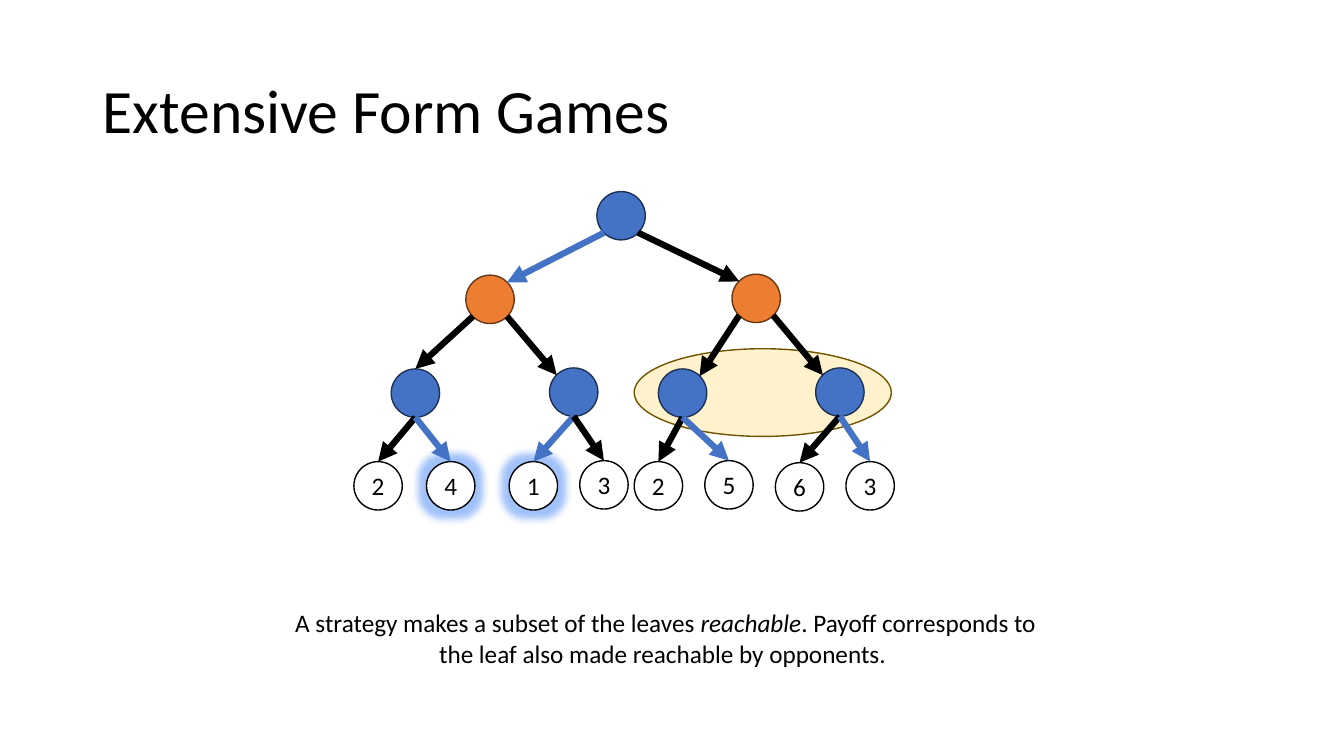
from dataclasses import dataclass
from typing import Any

from lxml import etree
from pptx import Presentation
from pptx.dml.color import RGBColor
from pptx.enum.shapes import MSO_CONNECTOR, MSO_SHAPE
from pptx.enum.text import MSO_ANCHOR, MSO_AUTO_SIZE, PP_ALIGN
from pptx.oxml.ns import qn
from pptx.util import Inches, Pt

OVAL = MSO_SHAPE.OVAL
STRAIGHT = MSO_CONNECTOR.STRAIGHT
MIDDLE = MSO_ANCHOR.MIDDLE
LEFT, CENTER = PP_ALIGN.LEFT, PP_ALIGN.CENTER
FIT_SHAPE = MSO_AUTO_SIZE.SHAPE_TO_FIT_TEXT

BLUE, BLUE_EDGE = "4472C4", "1E3256"
ORANGE, ORANGE_EDGE = "ED7D31", "683715"
CREAM, CREAM_EDGE = "FFF2CC", "705400"
WHITE, BLACK = "FFFFFF", "000000"

NODE_SIZE = 0.48
GLOW_RADIUS = Pt(11)

# Attachment points as fractions of a node's width and height.
ANCHORS = {
    "top": (0.5, 0),
    "bottom": (0.5, 1),
    "top left": (0.15, 0.15),
    "top right": (0.85, 0.15),
    "bottom left": (0.15, 0.85),
    "bottom right": (0.85, 0.85),
}


@dataclass(frozen=True)
class Node:
    left: float
    top: float
    fill: str = WHITE
    edge: str = BLACK
    payoff: str = ""
    reachable: bool = False


@dataclass(frozen=True)
class Move:
    parent: str
    child: str
    start: str = "bottom"
    end: str = "top"
    color: str = BLACK


@dataclass(frozen=True)
class TextPart:
    words: str
    size: int = 18
    italic: bool = False


NODES = {
    "root": Node(5.92, 1.9, BLUE, BLUE_EDGE),
    "L": Node(4.62, 2.73, ORANGE, ORANGE_EDGE),
    "R": Node(7.26, 2.72, ORANGE, ORANGE_EDGE),
    "LL": Node(3.88, 3.66, BLUE, BLUE_EDGE),
    "LR": Node(5.45, 3.65, BLUE, BLUE_EDGE),
    "RL": Node(6.53, 3.66, BLUE, BLUE_EDGE),
    "RR": Node(8.09, 3.65, BLUE, BLUE_EDGE),
    "LLL": Node(3.51, 4.58, payoff="2"),
    "LLR": Node(4.23, 4.58, payoff="4", reachable=True),
    "LRL": Node(5.05, 4.58, payoff="1", reachable=True),
    "LRR": Node(5.75, 4.57, payoff="3"),
    "RLL": Node(6.29, 4.58, payoff="2"),
    "RLR": Node(6.99, 4.57, payoff="5"),
    "RRL": Node(7.69, 4.59, payoff="6"),
    "RRR": Node(8.39, 4.58, payoff="3"),
}

MOVES = [
    Move("root", "L", "bottom left", "top right", BLUE),
    Move("root", "R", "bottom right", "top left"),
    Move("L", "LL", "bottom left", "top"),
    Move("L", "LR", "bottom right", "top left"),
    Move("R", "RL", "bottom left", "top right"),
    Move("R", "RR", "bottom right", "top left"),
    Move("LL", "LLL"),
    Move("LL", "LLR", color=BLUE),
    Move("LR", "LRL", color=BLUE),
    Move("LR", "LRR"),
    Move("RL", "RLL"),
    Move("RL", "RLR", color=BLUE),
    Move("RR", "RRL"),
    Move("RR", "RRR", color=BLUE),
]

TITLE = [TextPart("Extensive Form Games", 44)]
CAPTION_START = [
    TextPart("A strategy makes a subset of the leaves "),
    TextPart("reachable", italic=True),
    TextPart(". Payoff corresponds to"),
]
CAPTION_END = [TextPart("the leaf also made reachable by opponents. ")]

PAYOFF_FRAME = {"vertical_anchor": MIDDLE, "word_wrap": False, "margin_left": 0,
                "margin_right": 0, "margin_top": 0, "margin_bottom": 0}
TITLE_FRAME = {"vertical_anchor": MIDDLE, "word_wrap": True}
CAPTION_FRAME = {"word_wrap": False, "auto_size": FIT_SHAPE}


def rgb(color: str) -> RGBColor:
    return RGBColor.from_string(color)


def apply_format(target: Any, values: dict[str, Any]) -> None:
    for name, value in values.items():
        setattr(target, name, value)


def write_paragraph(paragraph: Any, parts: list[TextPart], layout: dict[str, Any]) -> None:
    apply_format(paragraph, layout)
    for part in parts:
        run = paragraph.add_run()
        run.text = part.words
        apply_format(run.font, {"name": "Calibri", "size": Pt(part.size), "italic": part.italic})
        run.font.color.rgb = rgb(BLACK)


def add_frame(slide: Any, box: tuple[float, ...], values: dict[str, Any]) -> Any:
    """Add a text box and return its text frame."""
    frame = slide.shapes.add_textbox(*map(Inches, box)).text_frame
    apply_format(frame, values)
    return frame


def add_oval(slide: Any, box: tuple[float, ...], fill: str, edge: str) -> Any:
    oval = slide.shapes.add_shape(OVAL, *map(Inches, box))
    oval.shadow.inherit = False
    oval.fill.solid()
    oval.fill.fore_color.rgb = rgb(fill)
    oval.line.color.rgb = rgb(edge)
    oval.line.width = Pt(1)
    return oval


def add_glow(oval: Any) -> None:
    effects = oval.element.spPr.find(qn("a:effectLst"))
    glow = etree.SubElement(effects, qn("a:glow"), rad=str(GLOW_RADIUS))
    color = etree.SubElement(glow, qn("a:srgbClr"), val=BLUE)
    etree.SubElement(color, qn("a:satMod"), val="175000")
    etree.SubElement(color, qn("a:alpha"), val="40000")


def add_node(slide: Any, node: Node) -> None:
    oval = add_oval(slide, (node.left, node.top, NODE_SIZE, NODE_SIZE), node.fill, node.edge)
    if node.reachable:
        add_glow(oval)
    if node.payoff:
        apply_format(oval.text_frame, PAYOFF_FRAME)
        write_paragraph(oval.text_frame.paragraphs[0], [TextPart(node.payoff)],
                        {"alignment": CENTER})


def anchor_point(node: Node, anchor: str) -> tuple[int, int]:
    across, down = ANCHORS[anchor]
    return Inches(node.left + across * NODE_SIZE), Inches(node.top + down * NODE_SIZE)


def add_move(slide: Any, move: Move) -> None:
    arrow = slide.shapes.add_connector(
        STRAIGHT,
        *anchor_point(NODES[move.parent], move.start),
        *anchor_point(NODES[move.child], move.end),
    )
    arrow.line.color.rgb = rgb(move.color)
    arrow.line.width = Pt(4.5)
    etree.SubElement(arrow.line._get_or_add_ln(), qn("a:tailEnd"), type="triangle")
    etree.SubElement(arrow.element.spPr, qn("a:effectLst"))


def main() -> None:
    deck = Presentation()
    deck.slide_width, deck.slide_height = Inches(13.33), Inches(7.5)
    slide = deck.slides.add_slide(deck.slide_layouts[6])

    add_oval(slide, (6.29, 3.46, 2.55, 0.87), CREAM, CREAM_EDGE)
    title = add_frame(slide, (0.92, 0.4, 11.5, 1.45), TITLE_FRAME)
    write_paragraph(title.paragraphs[0], TITLE, {"alignment": LEFT, "line_spacing": 0.9})
    for node in NODES.values():
        add_node(slide, node)
    for move in MOVES:
        add_move(slide, move)
    caption = add_frame(slide, (2.83, 5.98, 7.63, 0.71), CAPTION_FRAME)
    write_paragraph(caption.paragraphs[0], CAPTION_START, {"alignment": LEFT})
    write_paragraph(caption.add_paragraph(), CAPTION_END, {"alignment": CENTER})

    deck.save("out.pptx")


if __name__ == "__main__":
    main()
